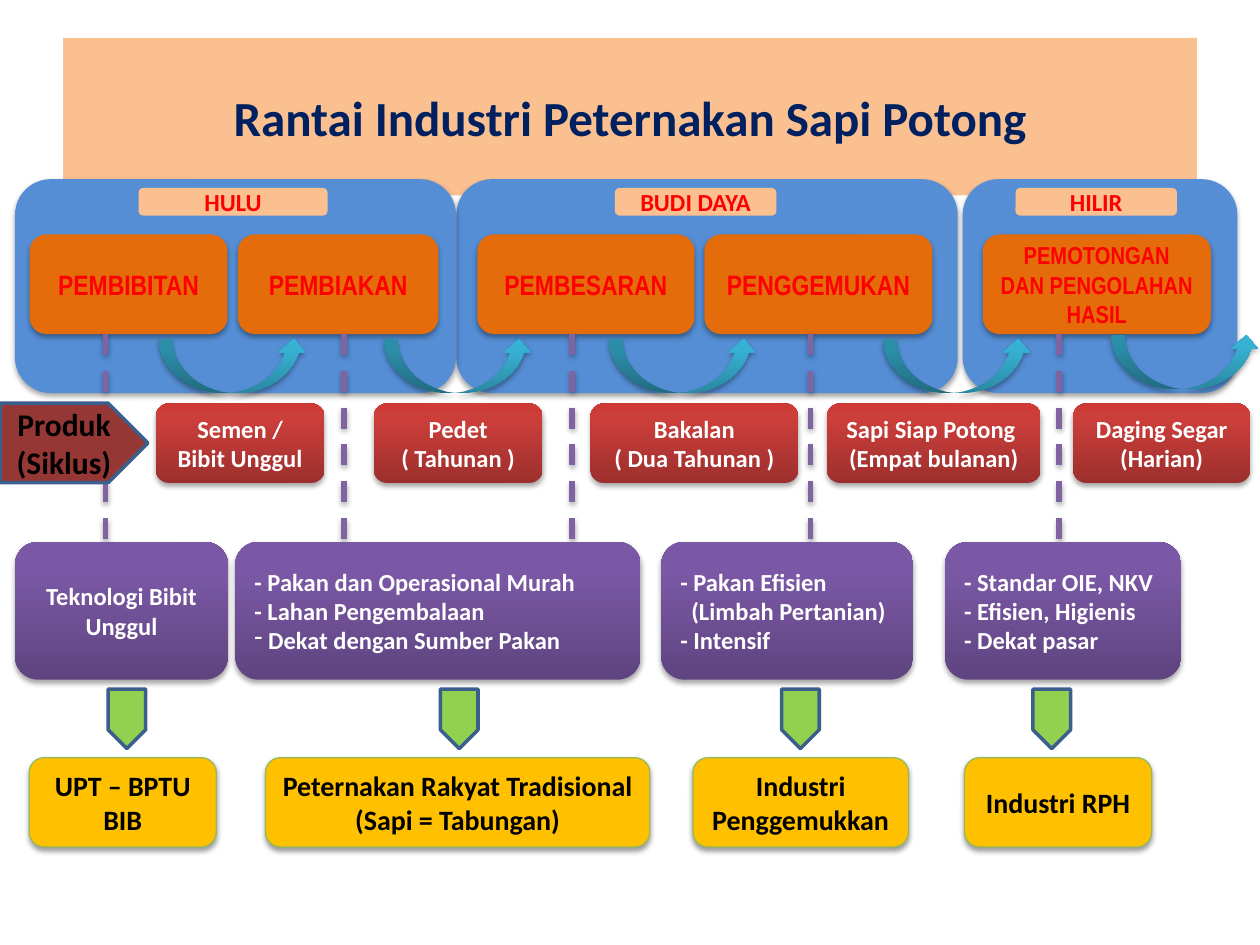
from lxml.etree import SubElement
from pptx import Presentation
from pptx.dml.color import RGBColor
from pptx.enum.dml import MSO_LINE
from pptx.enum.shapes import MSO_CONNECTOR, MSO_SHAPE
from pptx.enum.text import MSO_ANCHOR, PP_ALIGN
from pptx.oxml.ns import qn
from pptx.util import Pt

PEACH = RGBColor(0xFA, 0xC0, 0x90)
NAVY = RGBColor(0x00, 0x20, 0x60)
BLUE = RGBColor(0x55, 0x8E, 0xD5)
ORANGE = RGBColor(0xE4, 0x6C, 0x0A)
RED = RGBColor(0xFF, 0x00, 0x00)
MAROON = RGBColor(0x95, 0x37, 0x35)
GREEN = RGBColor(0x92, 0xD0, 0x50)
GOLD = RGBColor(0xFF, 0xC0, 0x00)
OLIVE = RGBColor(0x98, 0xB9, 0x55)
OUTLINE = RGBColor(0x3A, 0x5F, 0x8C)
PURPLE = RGBColor(0x80, 0x64, 0xA2)
BLACK = RGBColor(0x00, 0x00, 0x00)
WHITE = RGBColor(0xFF, 0xFF, 0xFF)

# Gradient colours at 0, 80 and 100 %, from bottom to top
GRADIENT_STOPS = (0, 80, 100)
RED_GRADIENT = [RGBColor.from_string(c) for c in ("9C2F2D", "CB3E3A", "CE3B37")]
PURPLE_GRADIENT = [RGBColor.from_string(c) for c in ("5F4480", "7B58A6", "7C57A8")]
TEAL_GRADIENT = [RGBColor.from_string(c) for c in ("2A88A2", "37B1D2", "34B4D6")]


def add_shadow(shape, opacity=35):
    properties = shape._element.spPr
    effects = properties.find(qn("a:effectLst"))
    if effects is None:
        effects = SubElement(properties, qn("a:effectLst"))
    shadow = SubElement(effects, qn("a:outerShdw"), blurRad=str(Pt(3.1)),
                        dist=str(Pt(1.8)), dir="5400000", rotWithShape="0")
    color = SubElement(shadow, qn("a:srgbClr"), val=str(BLACK))
    SubElement(color, qn("a:alpha"), val=str(opacity * 1000))


def fill_gradient(shape, colors):
    shape.fill.gradient()
    shape.fill.gradient_angle = 90
    stops = shape._element.spPr.find(qn("a:gradFill")).find(qn("a:gsLst"))
    for stop in list(stops):
        stops.remove(stop)
    for position, color in zip(GRADIENT_STOPS, colors):
        stop = SubElement(stops, qn("a:gs"), pos=str(position * 1000))
        SubElement(stop, qn("a:srgbClr"), val=str(color))


def add_block(slide, kind, box, fill, line=None, shadow=0):
    """Add a shape; fill is a colour or a gradient, line is (colour, width)."""
    shape = slide.shapes.add_shape(kind, *(Pt(value) for value in box))
    if isinstance(fill, list):
        fill_gradient(shape, fill)
    else:
        shape.fill.solid()
        shape.fill.fore_color.rgb = fill
    if line:
        shape.line.color.rgb, shape.line.width = line[0], Pt(line[1])
    else:
        shape.line.fill.background()
    shape.shadow.inherit = False
    if shadow:
        add_shadow(shape, shadow)
    return shape


def write(shape, text, size, color, font="Calibri", align=PP_ALIGN.CENTER):
    frame = shape.text_frame
    frame.text = text
    frame.word_wrap = True
    frame.vertical_anchor = MSO_ANCHOR.MIDDLE
    for paragraph in frame.paragraphs:
        paragraph.alignment = align
        for run in paragraph.runs:
            run.font.name, run.font.size, run.font.bold = font, Pt(size), True
            run.font.color.rgb = color


def add_title(slide, box, text):
    title = slide.shapes.title
    title.left, title.top, title.width, title.height = (Pt(value) for value in box)
    title.fill.solid()
    title.fill.fore_color.rgb = PEACH
    write(title, text, 28, NAVY)


def add_stage(slide, box, label, label_span, activities):
    """Blue panel with a label and activity boxes, offset from its left edge."""
    left, top, _, _ = box
    add_block(slide, MSO_SHAPE.ROUNDED_RECTANGLE, box, BLUE, shadow=35)
    offset, width = label_span
    tag = add_block(slide, MSO_SHAPE.ROUNDED_RECTANGLE,
                    (left + offset, top + 5, width, 15.8), PEACH)
    write(tag, label, 14, RED)
    for offset, width, text, size in activities:
        activity = add_block(slide, MSO_SHAPE.ROUNDED_RECTANGLE,
                             (left + offset, top + 31.6, width, 56.9), ORANGE, shadow=35)
        write(activity, text, size, RED, "Arial Narrow")


def add_flow_arrow(slide, box):
    add_block(slide, MSO_SHAPE.CURVED_UP_ARROW, box, TEAL_GRADIENT, shadow=35)


def add_dashed_link(slide, x, top, bottom):
    link = slide.shapes.add_connector(MSO_CONNECTOR.STRAIGHT,
                                      Pt(x), Pt(top), Pt(x), Pt(bottom))
    link.line.color.rgb, link.line.width = PURPLE, Pt(3)
    link.line.dash_style = MSO_LINE.DASH
    add_shadow(link)


def add_product(slide, box, text):
    product = add_block(slide, MSO_SHAPE.ROUNDED_RECTANGLE, box, RED_GRADIENT, shadow=35)
    write(product, text, 14, WHITE)


def add_requirement(slide, box, text, align):
    requirement = add_block(slide, MSO_SHAPE.ROUNDED_RECTANGLE, box,
                            PURPLE_GRADIENT, shadow=35)
    write(requirement, text, 14, WHITE, align=align)
    for paragraph in requirement.text_frame.paragraphs:
        if paragraph.text.startswith("("):  # continuation of the line above
            paragraph._p.get_or_add_pPr().set("marL", str(Pt(6.3)))
        elif paragraph.text.startswith(" "):  # automatic dash bullet
            SubElement(paragraph._p.get_or_add_pPr(), qn("a:buChar"), char="-")


def add_actor(slide, box, text, arrow_center):
    """Gold box with a green arrow pointing down to it."""
    length, thickness = 34, 21.5
    arrow = add_block(slide, MSO_SHAPE.PENTAGON,
                      (arrow_center - length / 2, box[1] - 33, length, thickness),
                      GREEN, (OUTLINE, 2))
    arrow.rotation = 90
    actor = add_block(slide, MSO_SHAPE.ROUNDED_RECTANGLE, box, GOLD, (OLIVE, 0.75), 38)
    write(actor, text, 16, BLACK)


def main():
    presentation = Presentation()
    presentation.slide_width, presentation.slide_height = Pt(720), Pt(540)
    slide = presentation.slides.add_slide(presentation.slide_layouts[5])
    add_title(slide, (36, 21.6, 648, 90), "Rantai Industri Peternakan Sapi Potong")

    # Stages of the chain
    stages = [
        (550.1, 157, "HILIR", (30.2, 92.2),
         [(11.5, 130.3, "PEMOTONGAN DAN PENGOLAHAN HASIL", 14)]),
        (260.8, 286.5, "BUDI DAYA", (90.6, 92.2),
         [(12, 124, "PEMBESARAN", 16), (141.7, 130.3, "PENGGEMUKAN", 16)]),
        (8.6, 252, "HULU", (70.6, 108),
         [(8.4, 113, "PEMBIBITAN", 16), (127.4, 114.5, "PEMBIAKAN", 16)]),
    ]
    for left, width, label, label_span, activities in stages:
        add_stage(slide, (left, 102.4, width, 122.2), label, label_span, activities)

    # Flow between the activities
    for left, top in ((90.7, 193.7), (219.4, 193.7), (347.8, 193.7),
                      (504.7, 193.7), (635, 191.5)):
        add_flow_arrow(slide, (left, top, 85, 31))
    for x in (60.5, 196.6, 326.9, 463, 605.2):
        add_dashed_link(slide, x, 190.8, 309.6)

    # Products of each cycle
    cycle = add_block(slide, MSO_SHAPE.PENTAGON, (0, 230.4, 84.5, 45.4),
                      MAROON, (OUTLINE, 2))
    write(cycle, "Produk (Siklus)", 18, BLACK)
    for left, width, text in (
            (89, 96.5, "Semen / Bibit Unggul"),
            (213.6, 96.5, "Pedet\n( Tahunan )"),
            (337.4, 118.8, "Bakalan\n( Dua Tahunan )"),
            (472.5, 122.2, "Sapi Siap Potong \n(Empat bulanan)"),
            (613.2, 101.3, "Daging Segar\n(Harian)")):
        add_product(slide, (left, 230.6, width, 45.4), text)

    # Requirements
    for left, width, text, align in (
            (8.6, 121.7, "Teknologi Bibit Unggul", PP_ALIGN.CENTER),
            (134.5, 231.6, "- Pakan dan Operasional Murah\n- Lahan Pengembalaan\n"
             " Dekat dengan Sumber Pakan", PP_ALIGN.LEFT),
            (377.9, 144, "- Pakan Efisien\n(Limbah Pertanian)\n- Intensif", PP_ALIGN.LEFT),
            (540, 135, "- Standar OIE, NKV\n- Efisien, Higienis\n- Dekat pasar",
             PP_ALIGN.LEFT)):
        add_requirement(slide, (left, 309.7, width, 78.7), text, align)

    # Actors
    for left, width, text, arrow_center in (
            (16.7, 106.9, "UPT – BPTU\nBIB", 72.5),
            (151.7, 219.6, "Peternakan Rakyat Tradisional (Sapi = Tabungan)", 262.4),
            (396, 123.1, "Industri Penggemukkan", 457.4),
            (551.2, 106.9, "Industri RPH", 601)):
        add_actor(slide, (left, 433, width, 51), text, arrow_center)

    presentation.save("out.pptx")


if __name__ == "__main__":
    main()
